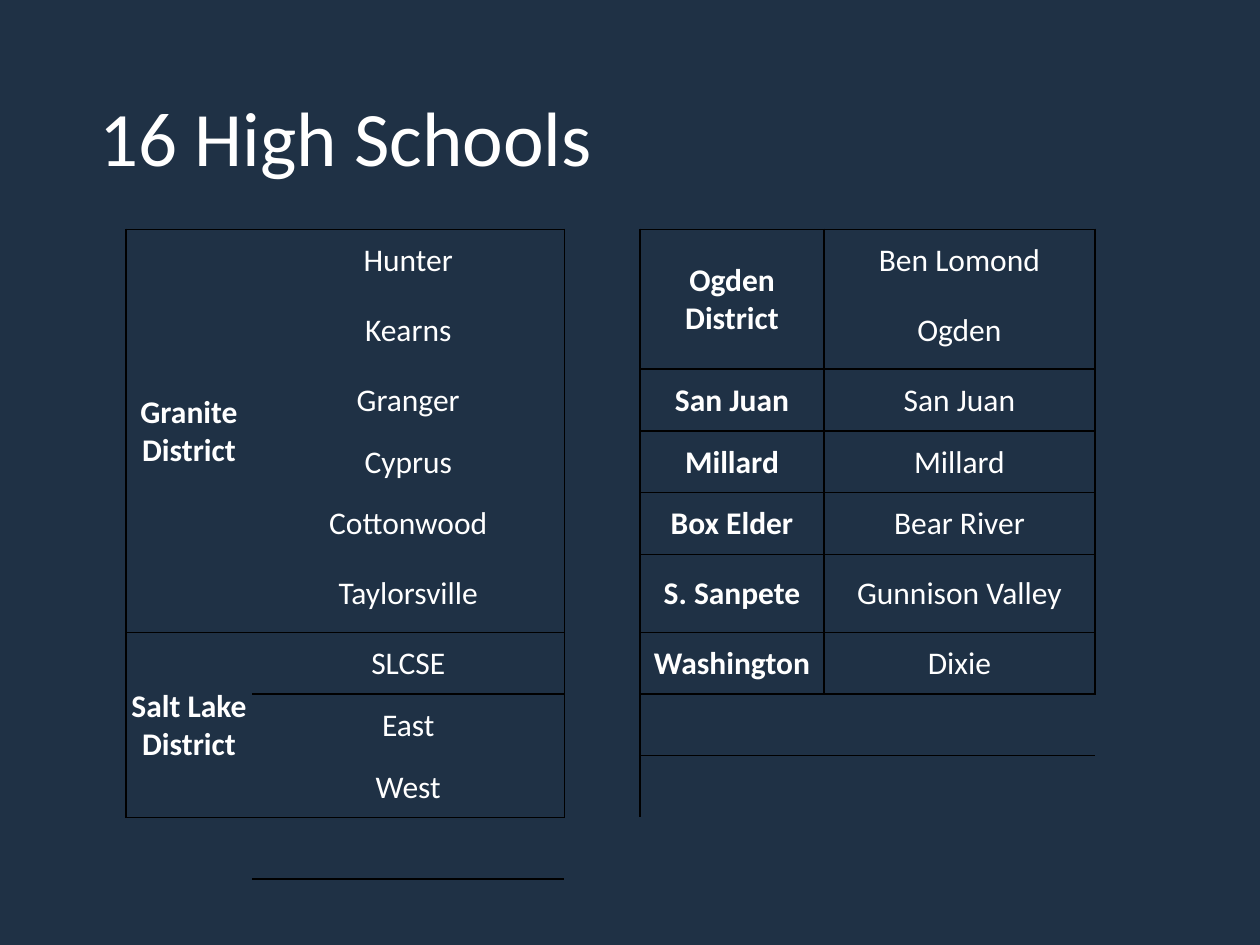
from lxml.etree import SubElement
from pptx import Presentation
from pptx.dml.color import RGBColor
from pptx.enum.text import MSO_ANCHOR as Anchor, PP_ALIGN as Align
from pptx.oxml.ns import qn
from pptx.util import Inches, Pt

WIDTH, HEIGHT = 10, 7.5
NAVY, WHITE, BLACK = "1F3145", "FFFFFF", "000000"
PLAIN_TABLE = "{2D5ABB26-0587-4C30-8999-92F81FD0307C}"
COLUMNS = [1, 2.48, 0.6, 1.46, 2.15]
ROW, TALL_ROW, ROW_COUNT = 0.49, 0.62, 11
TALL_ROWS = {1, 5}
LEFT_DISTRICTS = [
    (["Granite", "District"],
     ["Hunter", "Kearns", "Granger", "Cyprus", "Cottonwood", "Taylorsville"]),
    (["Salt Lake", "District"], ["SLCSE", "East", "West"]),
]
RIGHT_DISTRICTS = [
    (["Ogden", "District"], ["Ben Lomond", "Ogden"]),
    (["San Juan"], ["San Juan"]),
    (["Millard"], ["Millard"]),
    (["Box Elder"], ["Bear River"]),
    (["S. Sanpete"], ["Gunnison Valley"]),
    (["Washington"], ["Dixie"]),
]


def color(value):
    return RGBColor.from_string(value)


def add_run(paragraph, text, size, bold=False):
    run = paragraph.add_run()
    run.text = text
    run.font.name = "Calibri"
    run.font.size = Pt(size)
    run.font.bold = bold
    run.font.color.rgb = color(WHITE)


def add_title(slide, box, text):
    title = slide.shapes.add_textbox(*map(Inches, box)).text_frame
    title.word_wrap = True
    title.vertical_anchor = Anchor.MIDDLE
    title.paragraphs[0].line_spacing = 0.9
    add_run(title.paragraphs[0], text, 44)


def write_cell(cell, lines, bold=False):
    cell.vertical_anchor = Anchor.MIDDLE
    cell.margin_left = cell.margin_right = cell.margin_top = Inches(0.01)
    cell.margin_bottom = 0
    frame = cell.text_frame
    for index, line in enumerate(lines):
        paragraph = frame.add_paragraph() if index else frame.paragraphs[0]
        paragraph.alignment = Align.CENTER
        add_run(paragraph, line, 18, bold)


def outline_cell(cell, sides):
    properties = cell._tc.get_or_add_tcPr()
    shown = [side for side in "LRTB" if side in sides]
    for position, side in enumerate(shown):
        line = SubElement(properties, qn(f"a:ln{side}"), w=str(Pt(1)))
        fill = SubElement(line, qn("a:solidFill"))
        SubElement(fill, qn("a:srgbClr"), val=BLACK)
        properties.insert(position, line)


def add_districts(table, first_column, districts):
    top = 0
    for name, schools in districts:
        bottom = top + len(schools) - 1
        district = table.cell(top, first_column)
        if bottom > top:
            district.merge(table.cell(bottom, first_column))
        write_cell(district, name, bold=True)
        for row, school in enumerate(schools, top):
            write_cell(table.cell(row, first_column + 1), [school])
            ends = ("T" if row == top else "") + ("B" if row == bottom else "")
            outline_cell(table.cell(row, first_column + 1), "R" + ends)
            if row > top:
                outline_cell(table.cell(row, first_column), "L" + ends)
        outline_cell(district, "LTB")
        top = bottom + 1
    return top


def add_school_table(slide, left, top):
    heights = [TALL_ROW if row in TALL_ROWS else ROW for row in range(ROW_COUNT)]
    box = (left, top, sum(COLUMNS), sum(heights))
    table = slide.shapes.add_table(
        ROW_COUNT, len(COLUMNS), *map(Inches, box)).table
    table.first_row = table.horz_banding = False
    table._tbl.tblPr.find(qn("a:tableStyleId")).text = PLAIN_TABLE
    for column, width in zip(table.columns, COLUMNS):
        column.width = Inches(width)
    for row, height in zip(table.rows, heights):
        row.height = Inches(height)
    for cell in table.iter_cells():
        cell.fill.background()

    left_end = add_districts(table, 0, LEFT_DISTRICTS)
    right_end = add_districts(table, 3, RIGHT_DISTRICTS)
    for row in range(left_end):
        outline_cell(table.cell(row, 2), "LR" if row < right_end else "L")
    table.cell(left_end, 0).merge(table.cell(left_end + 1, 0))
    for row, first_column in ((left_end, 0), (right_end, 3)):
        for column in (first_column, first_column + 1):
            outline_cell(table.cell(row, column), "T")


def main():
    deck = Presentation()
    deck.slide_width, deck.slide_height = Inches(WIDTH), Inches(HEIGHT)
    slide = deck.slides.add_slide(deck.slide_layouts[6])
    slide.background.fill.solid()
    slide.background.fill.fore_color.rgb = color(NAVY)
    add_title(slide, (0.69, 0.4, 8.62, 1.45), "16 High Schools")
    add_school_table(slide, WIDTH * 0.1, 1.82)
    deck.save("out.pptx")


if __name__ == "__main__":
    main()
